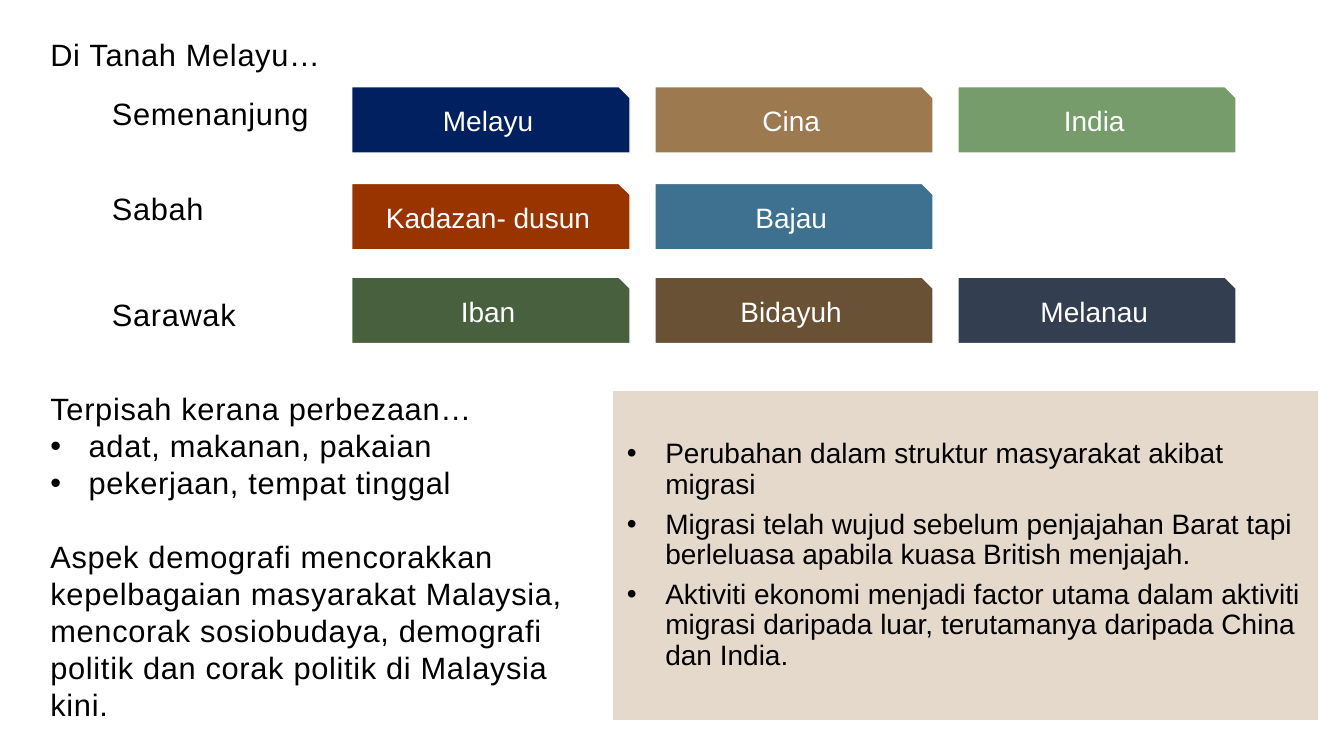
from dataclasses import dataclass

from lxml import etree
from pptx import Presentation, util as u
from pptx.dml.color import RGBColor
from pptx.enum import shapes, text
from pptx.oxml import ns


@dataclass(frozen=True)
class Theme:
    font: str = "Arial"
    ink: str = "000000"
    paper: str = "FFFFFF"
    panel: str = "E5D9CB"
    body_size: int = 22
    shape_size: int = 20
    spacing: int = 50  # hundredths of a point between letters
    body_insets: tuple = (0.24, 0.12, 0.08, 0.05)
    shape_insets: tuple = (0.15, 0.15, 0.15, 0.15)


THEME = Theme()
WIDTH, HEIGHT = u.Inches(13.33), u.Inches(7.5)
COLUMN, ROW = WIDTH / 40, HEIGHT / 30

# Region, row of its label, row of its tiles, communities with their colours
REGIONS = [
    ("Semenanjung", 0, 0.16,
     [("Melayu", "002060"), ("Cina", "9C794F"), ("India", "769C6B")]),
    ("Sabah", 3.76, 4,
     [("Kadazan- dusun", "993300"), ("Bajau", "3E7090")]),
    ("Sarawak", 7.96, 7.72,
     [("Iban", "48603E"), ("Bidayuh", "685135"), ("Melanau", "333F50")]),
]
DIFFERENCES = ["adat, makanan, pakaian", "pekerjaan, tempat tinggal"]
DEMOGRAPHY = (
    "Aspek demografi mencorakkan kepelbagaian masyarakat Malaysia, mencorak "
    "sosiobudaya, demografi politik dan corak politik di Malaysia kini."
)
MIGRATION = [
    "Perubahan dalam struktur masyarakat akibat migrasi",
    "Migrasi telah wujud sebelum penjajahan Barat tapi berleluasa apabila "
    "kuasa British menjajah.",
    "Aktiviti ekonomi menjadi factor utama dalam aktiviti migrasi daripada "
    "luar, terutamanya daripada China dan India.",
]


def emu(box):
    """Turn left, top, width, height in grid units into slide lengths."""
    return [int(n * unit) for n, unit in zip(box, (COLUMN, ROW) * 2)]


def prepare_frame(frame, insets, anchor):
    frame.word_wrap = True
    frame.vertical_anchor = anchor
    (frame.margin_left, frame.margin_top,
     frame.margin_right, frame.margin_bottom) = map(u.Inches, insets)


def write(frame, words, *, size, color=THEME.ink, align=text.PP_ALIGN.LEFT,
          bullet=False, before=0, after=0, line=1.0, spacing=0):
    """Fill the empty first paragraph, or add one after the others."""
    paragraph = frame.paragraphs[0]
    if paragraph.runs:
        paragraph = frame.add_paragraph()
    paragraph.alignment = align
    paragraph.line_spacing = line
    paragraph.space_before, paragraph.space_after = u.Pt(before), u.Pt(after)
    if bullet:
        properties = paragraph._p.get_or_add_pPr()
        properties.set("marL", str(u.Inches(0.38)))
        properties.set("indent", str(u.Inches(-0.38)))
        etree.SubElement(properties, ns.qn("a:buFont"), typeface=THEME.font)
        etree.SubElement(properties, ns.qn("a:buChar"), char="•")
    run = paragraph.add_run()
    run.text = words
    run.font.name, run.font.size = THEME.font, u.Pt(size)
    run.font.color.rgb = RGBColor.from_string(color)
    if spacing:
        run._r.get_or_add_rPr().set("spc", str(spacing))


def add_body(slide, box, paragraphs):
    """Place a text box from pairs of words and paragraph format."""
    frame = slide.shapes.add_textbox(*emu(box)).text_frame
    prepare_frame(frame, THEME.body_insets, text.MSO_ANCHOR.TOP)
    for words, style in paragraphs:
        write(frame, words, size=THEME.body_size, spacing=THEME.spacing, **style)


def add_block(slide, box, preset, fill, lines, **style):
    block = slide.shapes.add_shape(preset, *emu(box))
    block.shadow.inherit = False
    block.fill.solid()
    block.fill.fore_color.rgb = RGBColor.from_string(fill)
    block.line.color.rgb = RGBColor.from_string(THEME.paper)
    block.line.width = u.Pt(1)
    prepare_frame(block.text_frame, THEME.shape_insets, text.MSO_ANCHOR.MIDDLE)
    for words in lines:
        write(block.text_frame, words, size=THEME.shape_size, line=0.9,
              after=7, **style)


def add_heading(slide, box):
    add_body(slide, box, [("Di Tanah Melayu…", {"after": 12})])


def add_communities(slide, box):
    """One row per region: its label, then a tile for each community."""
    left, top, width, _ = box
    label_width, tiles_left, gap = 7.47, 7.86, 0.74
    tile_width = (width - tiles_left - 2 * gap) / 3
    for region, label_row, tile_row, communities in REGIONS:
        add_body(slide, (left, top + label_row, label_width, 2.36),
                 [(region, {"after": 12})])
        for index, (community, color) in enumerate(communities):
            tile_left = left + tiles_left + index * (tile_width + gap)
            add_block(slide, (tile_left, top + tile_row, tile_width, 2.64),
                      shapes.MSO_SHAPE.SNIP_1_RECTANGLE, color, [community],
                      color=THEME.paper, align=text.PP_ALIGN.CENTER)


def add_differences(slide, box):
    add_body(slide, box, [
        ("Terpisah kerana perbezaan…", {}),
        *((difference, {"bullet": True}) for difference in DIFFERENCES),
        (DEMOGRAPHY, {"before": 26.4}),
    ])


def add_migration(slide, box):
    add_block(slide, box, shapes.MSO_SHAPE.RECTANGLE, THEME.panel, MIGRATION,
              bullet=True)


def main():
    deck = Presentation()
    deck.slide_width, deck.slide_height = WIDTH, HEIGHT
    slide = deck.slides.add_slide(deck.slide_layouts[6])
    add_heading(slide, (0.78, 0.92, 21.09, 2.36))
    add_communities(slide, (2.61, 3.28, 34.18, 10.36))
    add_differences(slide, (0.78, 15, 16.89, 14.08))
    add_migration(slide, (18.21, 15.48, 21.03, 13.12))
    deck.save("out.pptx")


if __name__ == "__main__":
    main()
